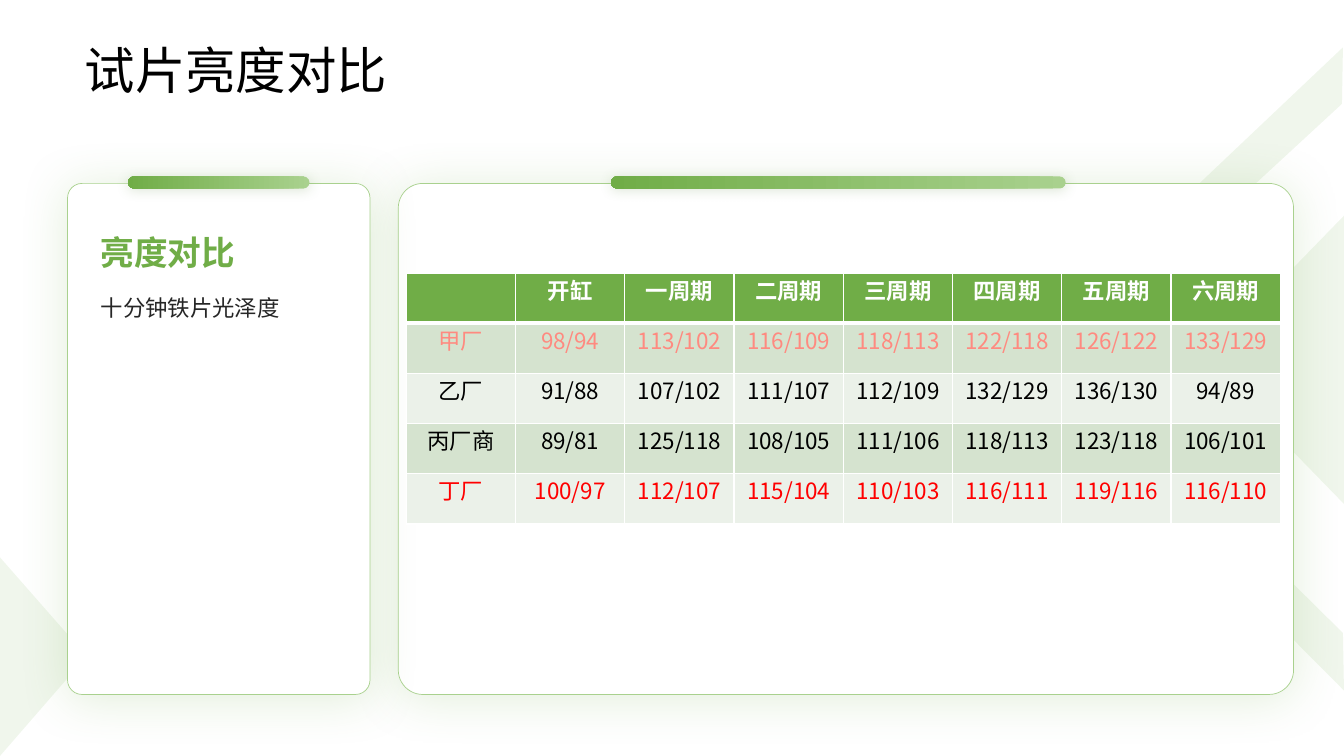
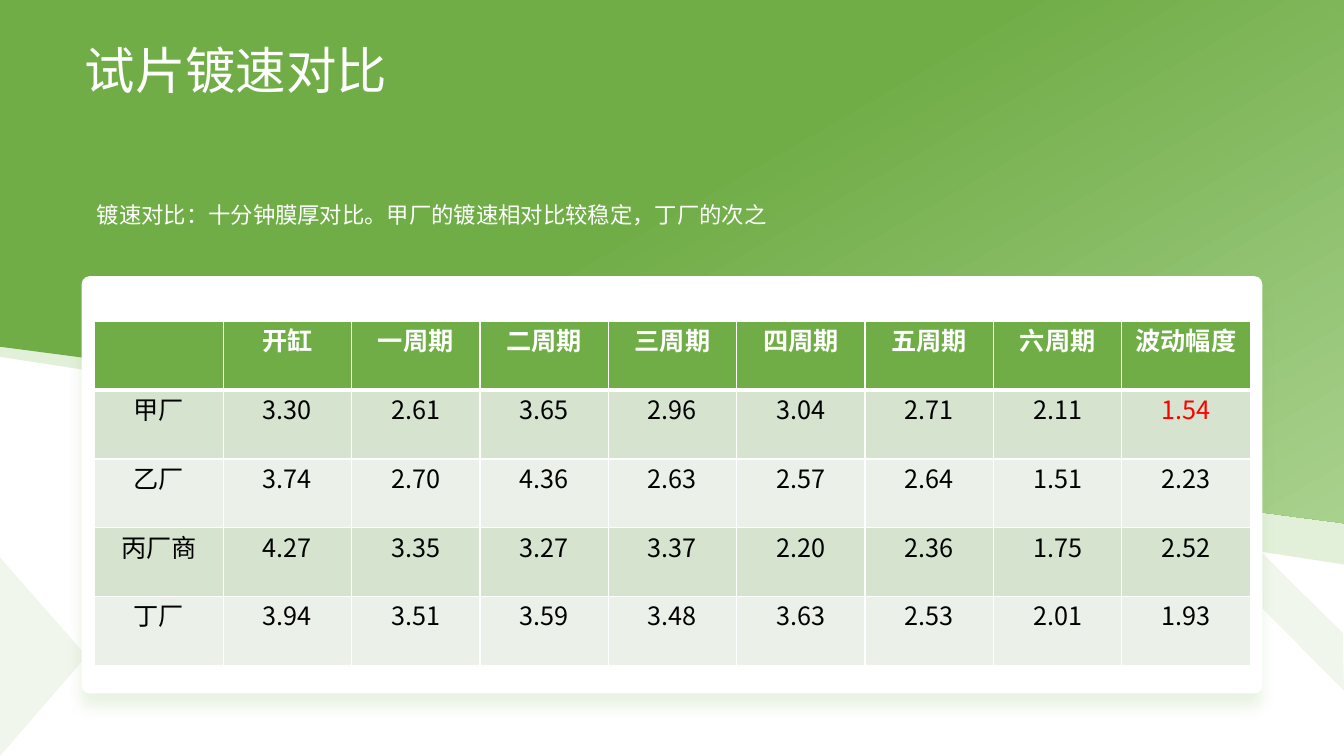
from lxml import etree
from pptx import Presentation
from pptx import util as u
from pptx.dml import color
from pptx.enum import shapes, text
from pptx.oxml import ns

GREEN = color.RGBColor(0x70, 0xAD, 0x47)
DARK_GREEN = color.RGBColor(0x54, 0x82, 0x35)
LIGHT_GREEN = color.RGBColor(0xA9, 0xD1, 0x8E)
PALE_GREEN = color.RGBColor(0xE2, 0xF0, 0xD9)
BAND_DARK = color.RGBColor(0xD5, 0xE3, 0xCF)
BAND_LIGHT = color.RGBColor(0xEB, 0xF1, 0xE9)
WHITE = color.RGBColor(0xFF, 0xFF, 0xFF)
BLACK = color.RGBColor(0x00, 0x00, 0x00)
GREY = color.RGBColor(0x26, 0x26, 0x26)
RED = color.RGBColor(0xFF, 0x00, 0x00)
PINK = color.RGBColor(0xFF, 0x8A, 0x80)

# Corner shapes behind every slide
BACKDROP = [
    [(13.32, 0.47), (13.31, 1.03), (10.57, 3.56), (13.32, 6.28), (13.33, 6.85), (10.06, 3.56)],
    [(13.33, 2.14), (13.33, 5), (11.94, 3.57)],
    [(0, 5.53), (0, 7.5), (0.86, 6.51)],
]
PERIODS = ["开缸", "一周期", "二周期", "三周期", "四周期", "五周期", "六周期"]
BRIGHTNESS = [
    ["", *PERIODS],
    ["甲厂", "98/94", "113/102", "116/109", "118/113", "122/118", "126/122", "133/129"],
    ["乙厂", "91/88", "107/102", "111/107", "112/109", "132/129", "136/130", "94/89"],
    ["丙厂商", "89/81", "125/118", "108/105", "111/106", "118/113", "123/118", "106/101"],
    ["丁厂", "100/97", "112/107", "115/104", "110/103", "116/111", "119/116", "116/110"],
]
PLATING_SPEED = [
    ["", *PERIODS, "波动幅度"],
    ["甲厂", "3.30", "2.61", "3.65", "2.96", "3.04", "2.71", "2.11", "1.54"],
    ["乙厂", "3.74", "2.70", "4.36", "2.63", "2.57", "2.64", "1.51", "2.23"],
    ["丙厂商", "4.27", "3.35", "3.27", "3.37", "2.20", "2.36", "1.75", "2.52"],
    ["丁厂", "3.94", "3.51", "3.59", "3.48", "3.63", "2.53", "2.01", "1.93"],
]


def add_element(parent, tag, **attributes):
    values = {name: str(value) for name, value in attributes.items()}
    return etree.SubElement(parent, ns.qn(tag), values)


class Deck:
    font_name = "Noto Sans CJK SC"

    def __init__(self):
        self.presentation = Presentation()
        self.presentation.slide_width = u.Inches(13.33)
        self.presentation.slide_height = u.Inches(7.5)
        self.slide = None

    def new_slide(self):
        layout = self.presentation.slide_layouts[6]
        self.slide = self.presentation.slides.add_slide(layout)
        for points in BACKDROP:
            self.outline(points, GREEN, opacity=10)

    def style_text(self, paragraph, size, rgb, bold=False):
        for run in paragraph.runs:
            font = run.font
            font.size, font.bold, font.name = u.Pt(size), bold, self.font_name
            font.color.rgb = rgb
            add_element(font._element, "a:ea", typeface=self.font_name)

    def gradient(self, shape, start, end, angle, start_position=0.0):
        shape.fill.gradient()
        shape.fill.gradient_angle = angle
        first, last = shape.fill.gradient_stops
        first.color.rgb, first.position = start, start_position
        last.color.rgb = end

    def shadow(self, shape, rgb, opacity, blur, distance):
        effects = shape._element.spPr.find(ns.qn("a:effectLst"))
        outer = add_element(effects, "a:outerShdw", blurRad=u.Pt(blur), dist=u.Pt(distance),
                            dir=90 * 60000, algn="ctr", rotWithShape=0)
        add_element(add_element(outer, "a:srgbClr", val=rgb), "a:alpha", val=opacity * 1000)

    def outline(self, points, rgb, opacity=100):
        corners = [(u.Inches(x), u.Inches(y)) for x, y in points]
        builder = self.slide.shapes.build_freeform(*corners[0], scale=1.0)
        builder.add_line_segments(corners[1:], close=True)
        shape = builder.convert_to_shape()
        shape.shadow.inherit = False
        shape.line.fill.background()
        shape.fill.solid()
        shape.fill.fore_color.rgb = rgb
        if opacity < 100:
            fill_color = shape._element.spPr.find(".//" + ns.qn("a:srgbClr"))
            add_element(fill_color, "a:alpha", val=opacity * 1000)
        return shape

    def rounded(self, left, top, width, height, corner):
        shape = self.slide.shapes.add_shape(
            shapes.MSO_SHAPE.ROUNDED_RECTANGLE,
            u.Inches(left), u.Inches(top), u.Inches(width), u.Inches(height))
        shape.adjustments[0] = corner
        shape.shadow.inherit = False
        shape.line.fill.background()
        shape.fill.solid()
        shape.fill.fore_color.rgb = WHITE
        return shape

    def card(self, left, width, tab_left, tab_width):
        panel = self.rounded(left, 1.82, width, 5.07, 0.048)
        panel.line.color.rgb = LIGHT_GREEN
        panel.line.width = u.Pt(0.5)
        self.shadow(panel, GREEN, 20, 36, 3)
        tab = self.rounded(tab_left, 1.75, tab_width, 0.12, 0.5)
        self.gradient(tab, LIGHT_GREEN, GREEN, 180)
        self.shadow(tab, DARK_GREEN, 20, 9, 1)

    def text(self, words, left, top, width, height, size, rgb, bold=False,
             anchor=text.MSO_ANCHOR.TOP, spacing=None):
        box = self.slide.shapes.add_textbox(
            u.Inches(left), u.Inches(top), u.Inches(width), u.Inches(height))
        frame = box.text_frame
        frame.word_wrap = True
        frame.vertical_anchor = anchor
        frame.margin_left = frame.margin_right = frame.margin_top = frame.margin_bottom = 0
        frame.text = words
        paragraph = frame.paragraphs[0]
        paragraph.line_spacing = spacing
        self.style_text(paragraph, size, rgb, bold)

    def title(self, words, rgb):
        self.text(words, 0.84, 0.32, 12, 0.8, 36, rgb, spacing=1.11)

    def borders(self, cell, top, bottom):
        properties = cell._tc.get_or_add_tcPr()
        for side, width in (("L", 1), ("R", 1), ("T", top), ("B", bottom)):
            line = add_element(properties, "a:ln" + side, w=u.Pt(width))
            add_element(add_element(line, "a:solidFill"), "a:srgbClr", val=WHITE)

    def table(self, rows, left, top, width, height, size, row_colors=None, cell_colors=None):
        """Colours are keyed by row, or by (row, column) for single cells."""
        row_colors, cell_colors = row_colors or {}, cell_colors or {}
        table = self.slide.shapes.add_table(
            len(rows), len(rows[0]),
            u.Inches(left), u.Inches(top), u.Inches(width), u.Inches(height)).table
        table.horz_banding = False
        for row, values in enumerate(rows):
            header = row == 0
            band = GREEN if header else BAND_DARK if row % 2 else BAND_LIGHT
            row_color = WHITE if header else row_colors.get(row, BLACK)
            for column, value in enumerate(values):
                cell = table.cell(row, column)
                cell.margin_left = cell.margin_right = u.Inches(0.07)
                cell.margin_top = cell.margin_bottom = 0
                self.borders(cell, 3 if row == 1 else 1, 3 if header else 1)
                cell.fill.solid()
                cell.fill.fore_color.rgb = band
                if value:
                    cell.text_frame.text = value
                    paragraph = cell.text_frame.paragraphs[0]
                    paragraph.alignment = text.PP_ALIGN.CENTER
                    rgb = cell_colors.get((row, column), row_color)
                    self.style_text(paragraph, size, rgb, header)


def brightness_slide(deck):
    deck.new_slide()
    deck.title("试片亮度对比", BLACK)
    # Cards
    deck.card(3.95, 8.88, 6.06, 4.51)
    deck.card(0.67, 3, 1.27, 1.8)
    # Left summary
    deck.text("亮度对比", 1, 2.22, 2.4, 0.48, 24, GREEN, True, text.MSO_ANCHOR.BOTTOM)
    deck.text("十分钟铁片光泽度", 1, 2.78, 2.19, 3.71, 16, GREY, spacing=1.5)
    # Results
    deck.table(BRIGHTNESS, 4.03, 2.71, 8.67, 2.49, 16, row_colors={1: PINK, 4: RED})


def plating_speed_slide(deck):
    deck.new_slide()
    # Slanted header
    deck.outline([(0, 0.28), (13.33, 0.28), (13.33, 5.6), (0, 3.54)], PALE_GREEN)
    header = deck.outline([(0, 0), (13.33, 0), (13.33, 5.19), (0, 3.44)], GREEN)
    deck.gradient(header, GREEN, LIGHT_GREEN, 300, 0.45)
    # Panel and wording
    panel = deck.rounded(0.81, 2.74, 11.71, 4.14, 0.019)
    deck.shadow(panel, GREEN, 15, 10, 10)
    deck.title("试片镀速对比", WHITE)
    deck.text("镀速对比：十分钟膜厚对比。甲厂的镀速相对比较稳定，丁厂的次之",
              0.96, 1.57, 11.61, 0.99, 16, WHITE, anchor=text.MSO_ANCHOR.MIDDLE, spacing=1.5)
    # Results
    deck.table(PLATING_SPEED, 0.94, 3.19, 11.46, 3.41, 18, cell_colors={(1, 8): RED})


def main():
    deck = Deck()
    brightness_slide(deck)
    plating_speed_slide(deck)
    deck.presentation.save("out.pptx")


if __name__ == "__main__":
    main()
